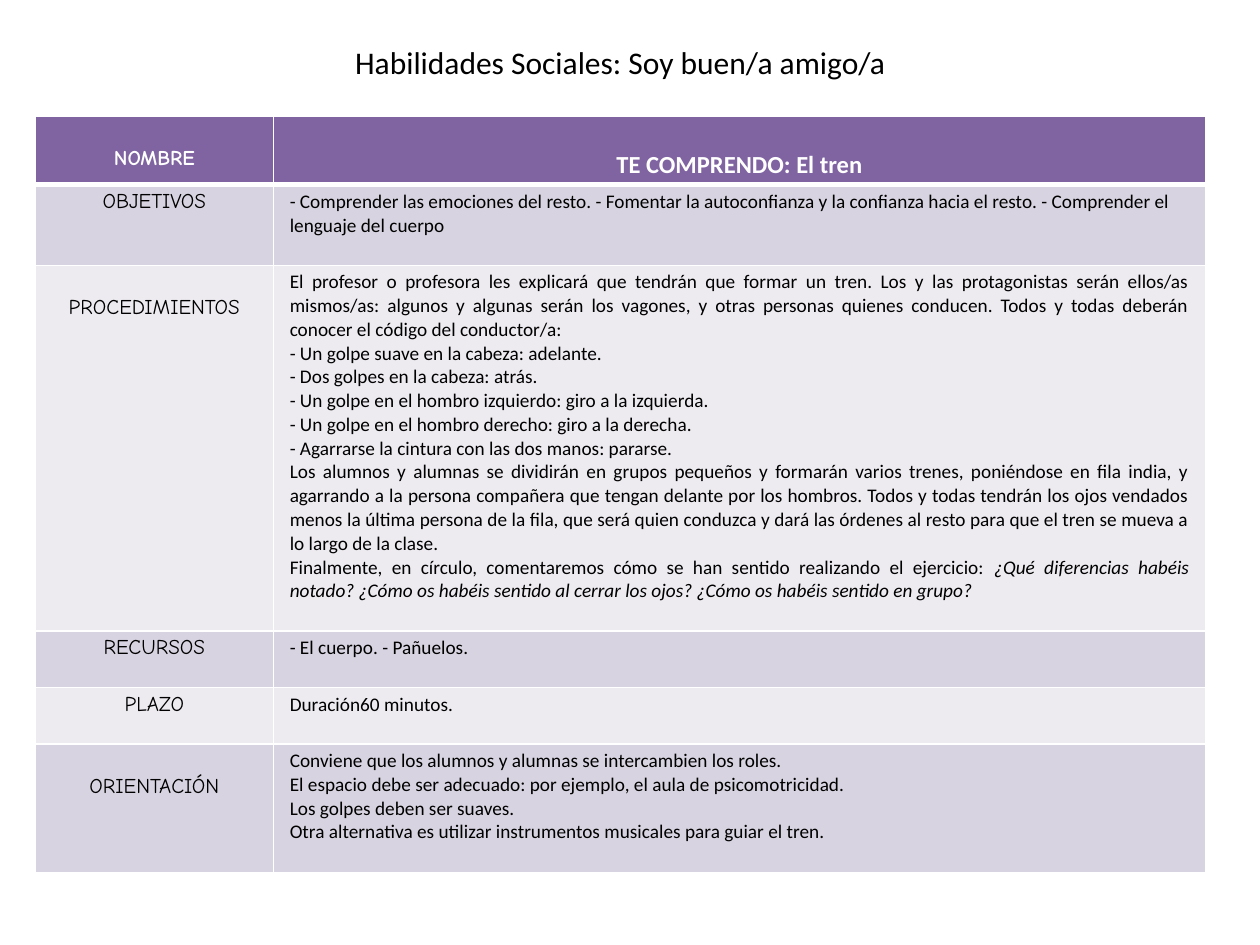
from pptx import Presentation
from pptx.dml.color import RGBColor
from pptx.enum.text import MSO_AUTO_SIZE, PP_ALIGN as Align
from pptx.oxml.ns import qn
from pptx.util import Inches, Pt
from lxml.etree import SubElement

BODY_FONT, LABEL_FONT = "Calibri", "Comic Neue"
WHITE, BLACK, PURPLE = "FFFFFF", "000000", "8064A2"
BANDS = ("D8D3E0", "EDEAF0")
COLUMN_WIDTHS = (1.89, 7.4)
TOP, TOP_LOWERED = 0.04, 0.24

# Label, row height, label top inset, alignment, paragraphs made of runs
ROWS = [
    ("OBJETIVOS", 0.64, TOP, Align.LEFT, [
        ["- Comprender las emociones del resto. - Fomentar la autoconfianza y la confianza "
         "hacia el resto. - Comprender el lenguaje del cuerpo"]]),
    ("PROCEDIMIENTOS", 2.9, TOP_LOWERED, Align.JUSTIFY, [
        ["El profesor o profesora les explicará que tendrán que formar un tren. Los y las "
         "protagonistas serán ellos/as mismos/as: algunos y algunas serán los vagones, y otras "
         "personas quienes conducen. Todos y todas deberán conocer el código del conductor/a:"],
        ["- Un golpe suave en la cabeza: adelante."],
        ["- Dos golpes en la cabeza: atrás."],
        ["- Un golpe en el hombro izquierdo: giro a la izquierda."],
        ["- Un golpe en el hombro derecho: giro a la derecha."],
        ["- Agarrarse la cintura con las dos manos: pararse."],
        ["Los alumnos y alumnas se dividirán en grupos pequeños y formarán varios trenes, "
         "poniéndose en fila india, y agarrando a la persona compañera que tengan delante por "
         "los hombros. Todos y todas tendrán los ojos vendados menos la última persona de la "
         "fila, que será quien conduzca y dará las órdenes al resto para que el tren se mueva "
         "a lo largo de la clase."],
        ["Finalmente, en círculo, comentaremos cómo se han sentido realizando el ejercicio: ",
         ("¿Qué diferencias habéis notado? ¿Cómo os habéis sentido al cerrar los ojos? "
          "¿Cómo os habéis sentido en grupo?", True)]]),
    ("RECURSOS", 0.45, TOP, Align.LEFT, [["- El cuerpo. - Pañuelos."]]),
    ("PLAZO", 0.45, TOP, Align.LEFT, [["Duración60 minutos."]]),
    ("ORIENTACIÓN", 1.02, TOP_LOWERED, Align.LEFT, [
        ["Conviene que los alumnos y alumnas se intercambien los roles."],
        ["El espacio debe ser adecuado: por ejemplo, el aula de psicomotricidad."],
        ["Los golpes deben ser suaves."],
        ["Otra alternativa es utilizar instrumentos musicales para guiar el tren."]]),
]
HEADER_HEIGHT = 0.54


def color(hex_value):
    return RGBColor.from_string(hex_value)


class SlideBuilder:
    def __init__(self, slide):
        self.slide = slide

    def add_text(self, frame, paragraphs, size, font=BODY_FONT, ink=BLACK, bold=False,
                 align=Align.LEFT):
        """Add paragraphs of runs; a run is a string or (string, italic)."""
        for index, runs in enumerate(paragraphs):
            paragraph = frame.add_paragraph() if index else frame.paragraphs[0]
            paragraph.alignment = align
            for item in runs:
                text, italic = item if isinstance(item, tuple) else (item, False)
                run = paragraph.add_run()
                run.text = text
                run.font.name, run.font.size = font, Pt(size)
                run.font.bold, run.font.italic = bold, italic
                run.font.color.rgb = color(ink)

    def title(self, text):
        shape = self.slide.shapes.add_textbox(Inches(2.72), Inches(0.29), Inches(4.8), Inches(0.4))
        shape.text_frame.word_wrap = True
        shape.text_frame.auto_size = MSO_AUTO_SIZE.SHAPE_TO_FIT_TEXT
        self.add_text(shape.text_frame, [[text]], 18)

    def table(self, left, top, widths, heights):
        shape = self.slide.shapes.add_table(
            len(heights), len(widths), Inches(left), Inches(top),
            Inches(sum(widths)), Inches(sum(heights)))
        for column, width in zip(shape.table.columns, widths):
            column.width = Inches(width)
        for row, height in zip(shape.table.rows, heights):
            row.height = Inches(height)
        return shape.table

    def border(self, cell, **widths):
        properties = cell._tc.get_or_add_tcPr()
        for side in "LRTB":
            line = SubElement(properties, qn(f"a:ln{side}"), w=str(int(Pt(widths.get(side, 1)))))
            fill = SubElement(line, qn("a:solidFill"))
            SubElement(fill, qn("a:srgbClr"), val=WHITE)

    def cell(self, cell, paragraphs, fill, size, top=TOP, borders=None, **style):
        self.border(cell, **(borders or {}))
        cell.fill.solid()
        cell.fill.fore_color.rgb = color(fill)
        cell.margin_left = cell.margin_right = Inches(0.13)
        cell.margin_top, cell.margin_bottom = Inches(top), Inches(0.04)
        self.add_text(cell.text_frame, paragraphs, size, **style)


def main():
    presentation = Presentation()
    presentation.slide_width, presentation.slide_height = Inches(10), Inches(7.5)
    builder = SlideBuilder(presentation.slides.add_slide(presentation.slide_layouts[6]))

    heights = [HEADER_HEIGHT] + [row[1] for row in ROWS]
    table = builder.table(0.28, 0.92, COLUMN_WIDTHS, heights)
    header = dict(fill=PURPLE, borders={"B": 3}, ink=WHITE, bold=True, align=Align.CENTER)
    builder.cell(table.cell(0, 0), [["NOMBRE"]], size=12, top=TOP_LOWERED,
                 font=LABEL_FONT, **header)
    builder.cell(table.cell(0, 1), [["TE COMPRENDO: El tren"]], size=14, top=0.27, **header)

    for index, (label, _, label_top, align, paragraphs) in enumerate(ROWS):
        band = dict(fill=BANDS[index % 2], borders={} if index else {"T": 3})
        builder.cell(table.cell(index + 1, 0), [[label]], size=12, top=label_top,
                     font=LABEL_FONT, align=Align.CENTER, **band)
        builder.cell(table.cell(index + 1, 1), paragraphs, size=11, align=align, **band)

    builder.title("Habilidades Sociales: Soy buen/a amigo/a")
    presentation.save("out.pptx")


if __name__ == "__main__":
    main()
